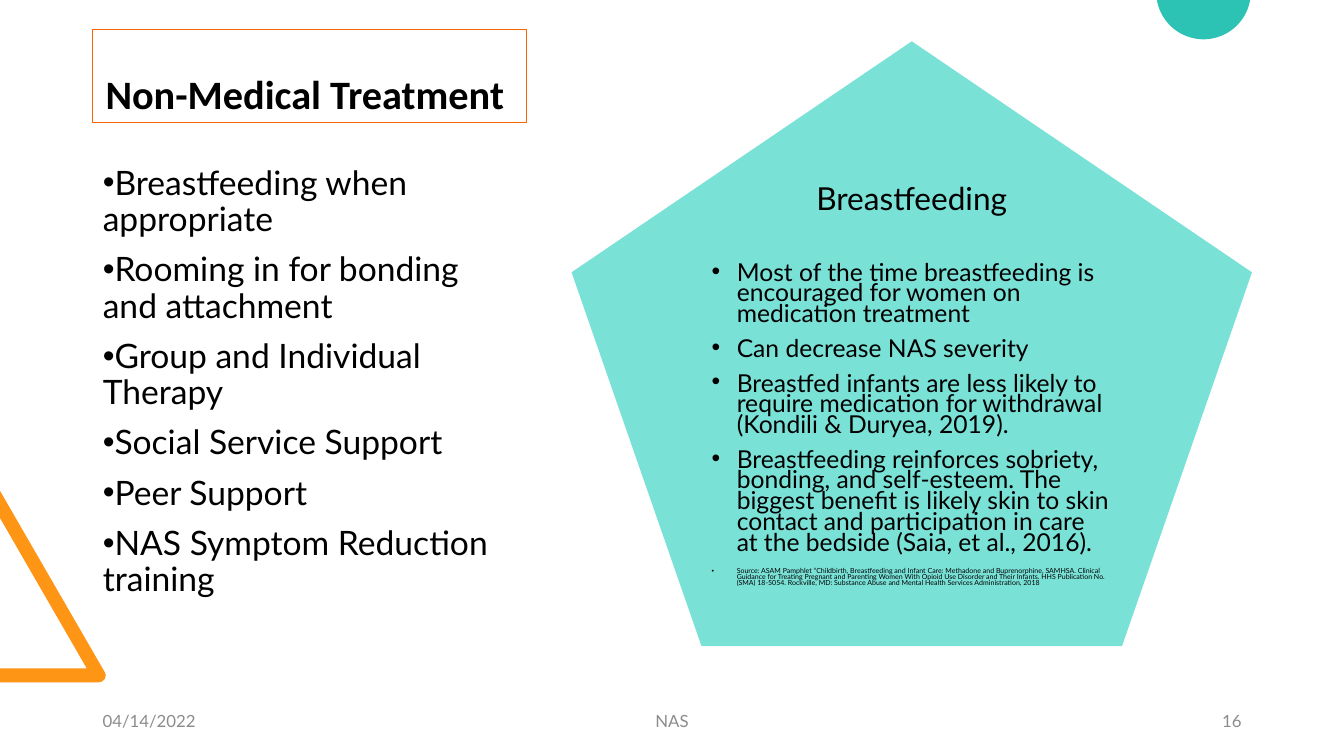
from dataclasses import dataclass
from math import cos, radians, sin

from lxml.etree import SubElement
from pptx import Presentation
from pptx.dml.color import RGBColor
from pptx.enum.text import MSO_ANCHOR as Anchor, MSO_AUTO_SIZE as AutoSize, PP_ALIGN as Align
from pptx.oxml.ns import qn
from pptx.util import Inches, Pt

WIDTH, HEIGHT = Inches(13.333), Inches(7.5)
BLACK, GREY = "000000", "8C8C8C"
ORANGE, TEAL, AQUA, OUTLINE = "FF9514", "2CC3B4", "7AE1D7", "FA6400"
LEFT_MARGIN, COLUMN_WIDTH = 6.9, 32.25
FOOTER_TOP, FOOTER_HEIGHT = 92.67, 5.33


@dataclass(frozen=True)
class Box:
    """A frame in percent of the slide's width and height."""
    left: float
    top: float
    width: float
    height: float


@dataclass(frozen=True)
class Footer:
    """A footer entry with its horizontal place and alignment."""
    text: str
    left: float
    width: float
    align: Align


@dataclass(frozen=True)
class Outline:
    """A filled decoration given by points in percent of the slide."""
    points: tuple
    color: str


TREATMENTS = (
    "Breastfeeding when appropriate",
    "Rooming in for bonding and attachment",
    "Group and Individual Therapy",
    "Social Service Support",
    "Peer Support",
    "NAS Symptom Reduction training",
)
BENEFITS = (
    "Most of the time breastfeeding is encouraged for women on medication treatment",
    "Can decrease NAS severity",
    "Breastfed infants are less likely to require medication for withdrawal  (Kondili & Duryea, 2019).",
    "Breastfeeding reinforces sobriety, bonding, and self-esteem. The biggest benefit is likely "
    "skin to skin contact and participation in care at the bedside (Saia, et al., 2016).",
)
SOURCE = (
    "Source: ASAM Pamphlet “Childbirth, Breastfeeding and Infant Care: Methadone and "
    "Buprenorphine, SAMHSA. Clinical Guidance for Treating Pregnant and Parenting Women With "
    "Opioid Use Disorder and Their Infants. HHS Publication No. (SMA) 18-5054. Rockville, MD: "
    "Substance Abuse and Mental Health Services Administration, 2018"
)
FOOTERS = (
    Footer("04/14/2022", LEFT_MARGIN, 22.5, Align.LEFT),
    Footer("NAS", 33.13, 33.75, Align.CENTER),
    Footer("16", 70.63, 22.5, Align.RIGHT),
)
DECORATIONS = (
    Outline(
        ((0, 90.27), (0, 88.4), (6.45, 88.4), (0, 68.53), (0, 64.93), (7.8, 88.93),
         (7.87, 89.33), (7.8, 89.8), (7.6, 90.15), (7.35, 90.27)),
        ORANGE,
    ),
    Outline(
        tuple((89.55 + 3.52 * cos(radians(angle)), -1.07 + 6.27 * sin(radians(angle)))
              for angle in range(10, 171, 4)),
        TEAL,
    ),
)


def across(percent: float) -> int:
    """Return a share of the slide's width."""
    return round(WIDTH * percent / 100)


def down(percent: float) -> int:
    """Return a share of the slide's height."""
    return round(HEIGHT * percent / 100)


def color_of(value: str) -> RGBColor:
    """Turn a hex string into a colour."""
    return RGBColor.from_string(value)


def place(shape, box: Box) -> None:
    """Move and size a shape."""
    shape.left, shape.top = across(box.left), down(box.top)
    shape.width, shape.height = across(box.width), down(box.height)


def prepare(shape, anchor: Anchor):
    """Set wrapping and anchoring, and return the text frame."""
    frame = shape.text_frame
    frame.word_wrap = True
    frame.auto_size = AutoSize.NONE
    frame.vertical_anchor = anchor
    return frame


def write(frame, text: str, *, size: float, font: str = "Lato", color: str = BLACK,
          bold: bool = False, align: Align = Align.LEFT, line: float = 1.0,
          before: float = 0, after: float = 0, bullet: bool = False, indent: float = 0) -> None:
    """Write one formatted paragraph at the end of a text frame."""
    paragraph = frame.paragraphs[-1]
    if paragraph.runs:
        paragraph = frame.add_paragraph()
    paragraph.alignment = align
    paragraph.line_spacing = line
    paragraph.space_before, paragraph.space_after = Pt(before), Pt(after)
    properties = paragraph._p.get_or_add_pPr()
    properties.set("marL", str(Inches(indent)))
    properties.set("indent", str(-Inches(indent)))
    if bullet:
        SubElement(properties, qn("a:buFont")).set("typeface", "Arial")
        SubElement(properties, qn("a:buChar")).set("char", "•")
    else:
        SubElement(properties, qn("a:buNone"))
    run = paragraph.add_run()
    run.text = text
    run.font.name, run.font.size, run.font.bold = font, Pt(size), bold
    run.font.color.rgb = color_of(color)


def set_geometry(shape, preset: str) -> None:
    """Give a placeholder a preset outline."""
    geometry = SubElement(shape._element.spPr, qn("a:prstGeom"))
    geometry.set("prst", preset)
    SubElement(geometry, qn("a:avLst"))


def draw_decoration(slide, outline: Outline) -> None:
    """Draw a filled outline behind the slide's content."""
    points = [(across(x), down(y)) for x, y in outline.points]
    builder = slide.shapes.build_freeform(*points[0])
    builder.add_line_segments(points[1:], close=True)
    shape = builder.convert_to_shape()
    shape.shadow.inherit = False
    shape.fill.solid()
    shape.fill.fore_color.rgb = color_of(outline.color)
    shape.line.fill.background()
    slide.shapes._spTree.insert(2, shape._element)


def draw_title(title) -> None:
    """Fill in the outlined title."""
    place(title, Box(LEFT_MARGIN, 3.87, COLUMN_WIDTH, 12.4))
    title.line.color.rgb = color_of(OUTLINE)
    title.line.width = Pt(0.75)
    write(prepare(title, Anchor.BOTTOM), "Non-Medical Treatment ", size=28.8, font="Calibri",
          bold=True, align=Align.CENTER, line=0.9)


def draw_treatments(body) -> None:
    """Fill in the list of treatments."""
    place(body, Box(LEFT_MARGIN, 21.33, COLUMN_WIDTH, 64.27))
    frame = prepare(body, Anchor.TOP)
    for treatment in TREATMENTS:
        write(frame, treatment, size=24, line=0.9, before=10, bullet=True)


def draw_breastfeeding(body) -> None:
    """Fill in the pentagon about breastfeeding."""
    place(body, Box(42.53, 5.47, 50.63, 80))
    set_geometry(body, "pentagon")
    body.fill.solid()
    body.fill.fore_color.rgb = color_of(AQUA)
    frame = prepare(body, Anchor.TOP)
    write(frame, "Breastfeeding", size=22.6, align=Align.CENTER, line=0.7, before=10, after=25)
    for text, size in [(benefit, 17.6) for benefit in BENEFITS] + [(SOURCE, 5)]:
        write(frame, text, size=size, line=0.7, before=10, bullet=True, indent=0.25)


def draw_footer(slide, footer: Footer) -> None:
    """Add one footer entry."""
    shape = slide.shapes.add_textbox(0, 0, 0, 0)
    place(shape, Box(footer.left, FOOTER_TOP, footer.width, FOOTER_HEIGHT))
    write(prepare(shape, Anchor.MIDDLE), footer.text, size=12, color=GREY, align=footer.align)


def main() -> None:
    """Build and save the presentation."""
    presentation = Presentation()
    presentation.slide_width, presentation.slide_height = WIDTH, HEIGHT
    slide = presentation.slides.add_slide(presentation.slide_layouts[3])
    title, pentagon, treatments = slide.placeholders
    draw_title(title)
    draw_breastfeeding(pentagon)
    draw_treatments(treatments)
    for decoration in DECORATIONS:
        draw_decoration(slide, decoration)
    for footer in FOOTERS:
        draw_footer(slide, footer)
    presentation.save("out.pptx")


if __name__ == "__main__":
    main()
